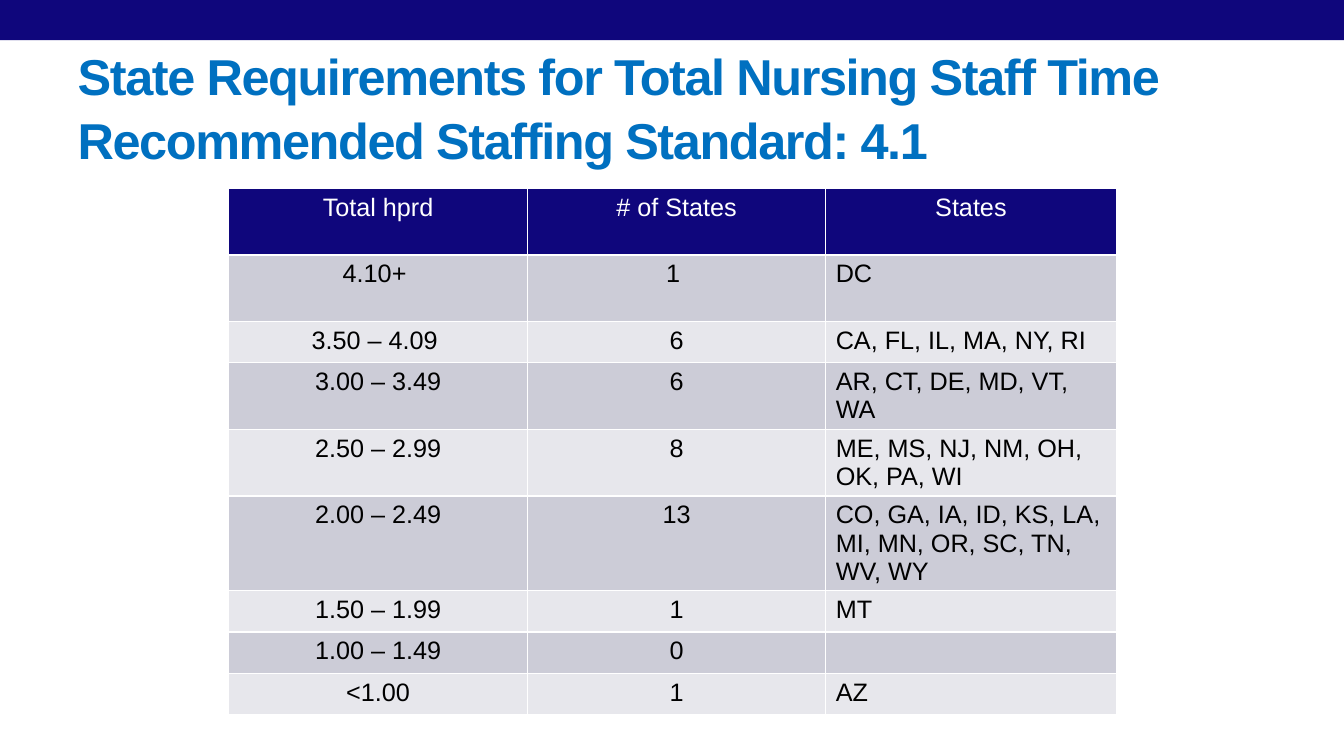
import pptx
import pptx.util
import pptx.dml.color
import pptx.enum.shapes
import pptx.enum.text
from dataclasses import dataclass

Inches, Pt = pptx.util.Inches, pptx.util.Pt
RGB = pptx.dml.color.RGBColor.from_string
ALIGN = pptx.enum.text.PP_ALIGN

TITLE_LINES = ["State Requirements for Total Nursing Staff Time ",
               "Recommended Staffing Standard: 4.1"]
HEADERS = ("Total hprd", "# of States", "States")
# hours per resident day, number of states, states, row height
STAFFING = [
    ("4.10+ ", "1 ", "DC", 0.66),
    ("3.50 – 4.09 ", "6", "CA, FL, IL, MA, NY, RI", 0.41),
    ("3.00 – 3.49", "6", "AR, CT, DE, MD, VT, WA", 0.66),
    ("2.50 – 2.99", "8", "ME, MS, NJ, NM, OH, OK, PA, WI", 0.66),
    ("2.00 – 2.49", "13",
     "CO, GA, IA, ID, KS, LA, MI, MN, OR, SC, TN, WV, WY", 0.94),
    ("1.50 – 1.99", "1", "MT", 0.41),
    ("1.00 – 1.49", "0", "", 0.41),
    ("<1.00", "1", "AZ", 0.41),
]
HEADER_HEIGHT = 0.66
COLUMN_WIDTHS = (2.96, 2.96, 2.88)


@dataclass(frozen=True)
class Theme:
    font: str = "Arial"
    navy: str = "0F067C"
    title: str = "0070C0"
    white: str = "FFFFFF"
    text: str = "000000"
    bands: tuple = ("CCCCD7", "E7E7EC")
    title_size: int = 36
    table_size: int = 18


THEME = Theme()


def add_run(p, text, size, color, bold=False):
    r = p.add_run()
    r.text = text
    r.font.name = THEME.font
    r.font.size = Pt(size)
    r.font.bold = bold
    r.font.color.rgb = RGB(color)
    return r


def add_band(s):
    sp = s.shapes.add_shape(pptx.enum.shapes.MSO_SHAPE.RECTANGLE,
                            0, 0, Inches(13.33), Inches(0.4))
    sp.shadow.inherit = False
    sp.fill.solid()
    sp.fill.fore_color.rgb = RGB(THEME.navy)
    sp.line.fill.background()


def fill_title(sp):
    sp.left, sp.top = Inches(0.67), Inches(0.51)
    sp.width, sp.height = Inches(12), Inches(1.08)
    tf = sp.text_frame
    tf.word_wrap = True
    tf.auto_size = pptx.enum.text.MSO_AUTO_SIZE.NONE
    tf.vertical_anchor = pptx.enum.text.MSO_ANCHOR.MIDDLE
    p = tf.paragraphs[0]
    p.alignment = ALIGN.LEFT
    p.line_spacing = 1.05
    for i, line in enumerate(TITLE_LINES):
        if i:
            p.add_line_break()
        r = add_run(p, line, THEME.title_size, THEME.title, bold=True)
        r.font._element.set("spc", "-100")  # hundredths of a point


def fill_cell(cell, text, fill, color, align):
    cell.fill.solid()
    cell.fill.fore_color.rgb = RGB(fill)
    p = cell.text_frame.paragraphs[0]
    p.alignment = align
    p.font.size = Pt(THEME.table_size)
    if text:
        add_run(p, text, THEME.table_size, color)


def add_staffing_table(s):
    rows = [(*HEADERS, HEADER_HEIGHT)] + STAFFING
    table = s.shapes.add_table(
        len(rows), len(HEADERS), Inches(2.27), Inches(1.87),
        Inches(sum(COLUMN_WIDTHS)), Inches(sum(row[-1] for row in rows))).table
    for column, width in zip(table.columns, COLUMN_WIDTHS):
        column.width = Inches(width)
    for i, (*texts, height) in enumerate(rows):
        table.rows[i].height = Inches(height)
        header = i == 0
        fill = THEME.navy if header else THEME.bands[(i - 1) % 2]
        color = THEME.white if header else THEME.text
        for j, text in enumerate(texts):
            align = ALIGN.CENTER if header or j < 2 else ALIGN.LEFT
            fill_cell(table.cell(i, j), text, fill, color, align)


def main():
    prs = pptx.Presentation()
    prs.slide_width, prs.slide_height = Inches(13.33), Inches(7.5)
    s = prs.slides.add_slide(prs.slide_layouts[5])
    add_band(s)
    fill_title(s.shapes.title)
    add_staffing_table(s)
    prs.save("out.pptx")


if __name__ == "__main__":
    main()
